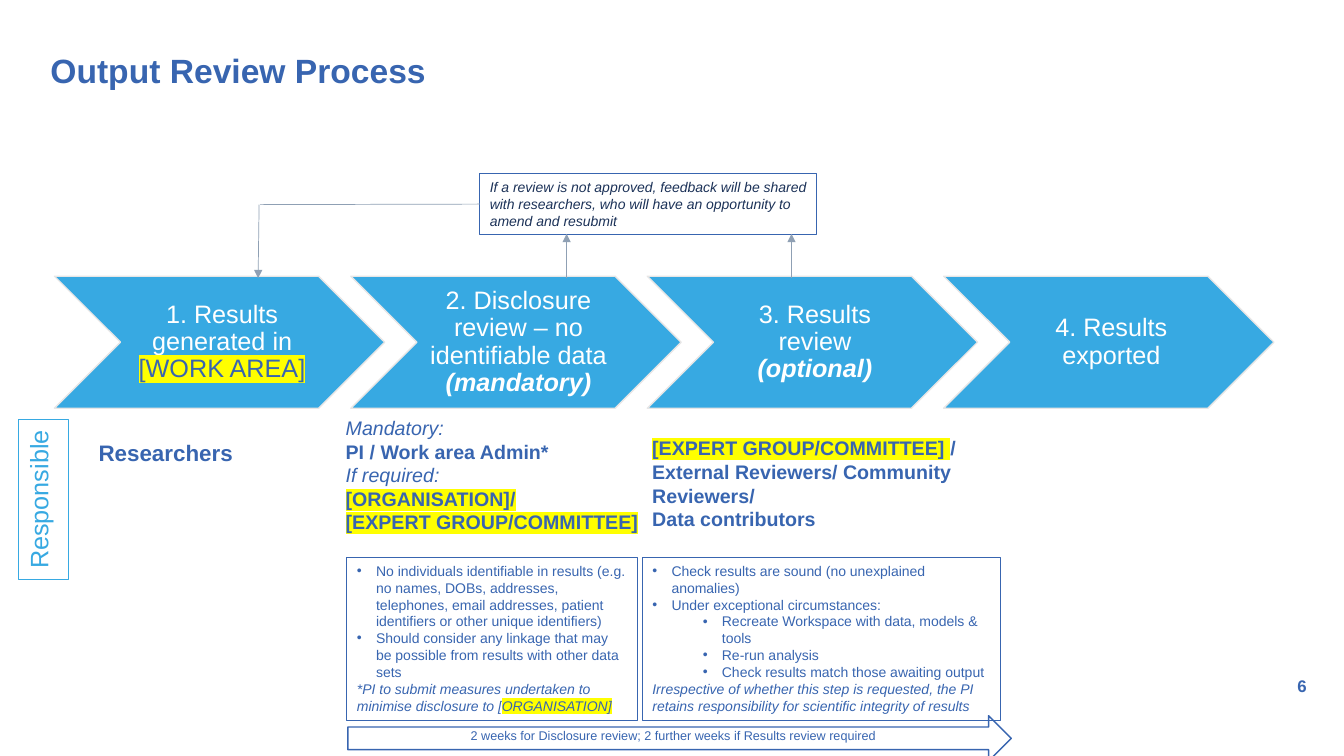
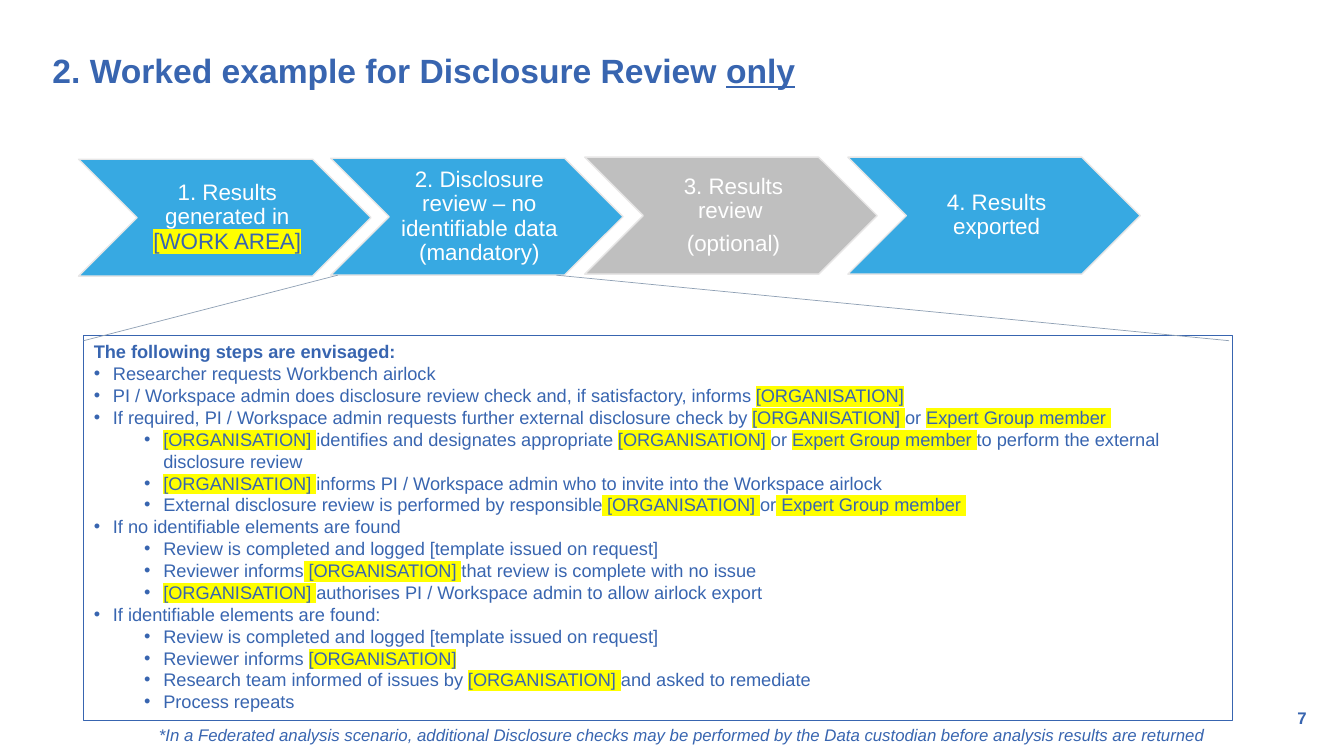
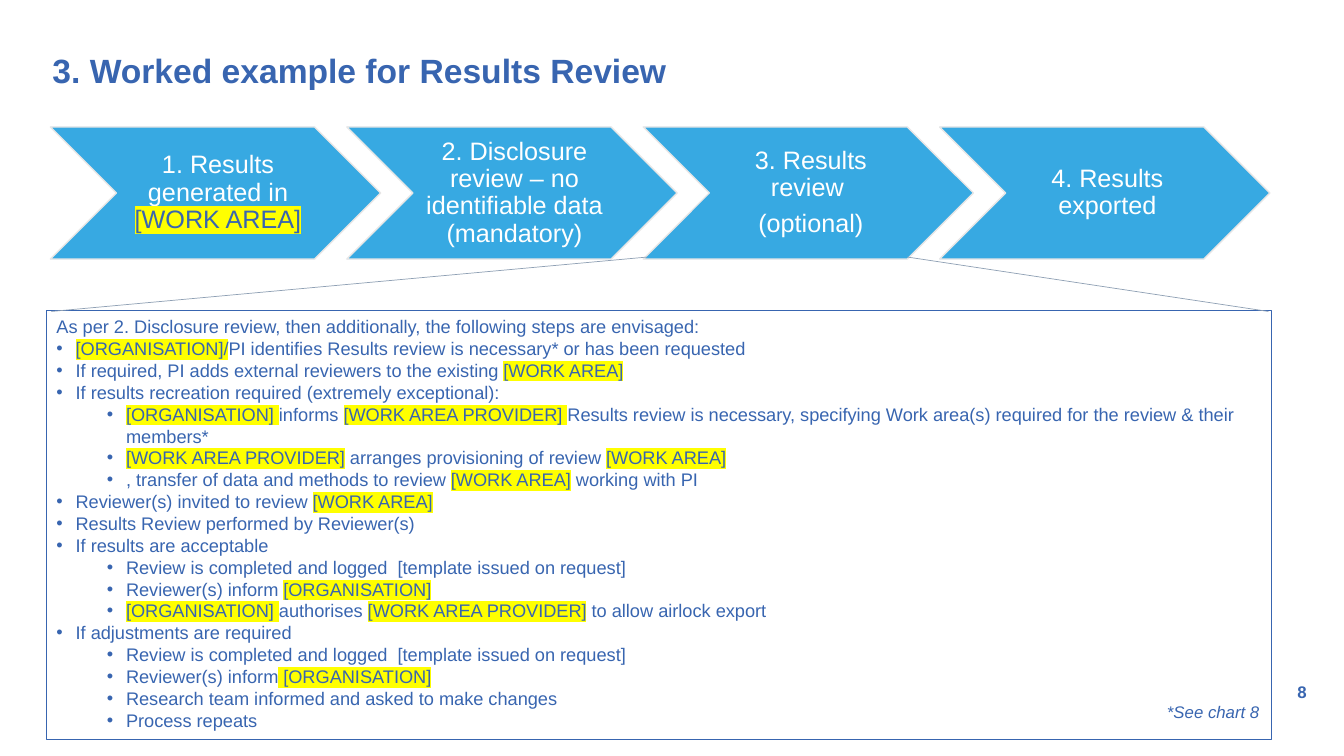
from dataclasses import dataclass
from functools import partial

from lxml.etree import SubElement
from pptx import Presentation
from pptx.dml.color import RGBColor
from pptx.enum.shapes import MSO_CONNECTOR as Connector, MSO_SHAPE as Preset
from pptx.enum.text import MSO_ANCHOR as Anchor, MSO_AUTO_SIZE as AutoSize, PP_ALIGN as Align
from pptx.oxml.ns import qn
from pptx.util import Inches, Pt

FONT = "Arial"
BLUE, SKY, NAVY = "3865B0", "37A9E2", "1C3258"
WHITE, GREY, PALE, SLATE = "FFFFFF", "BFBFBF", "E7E6E6", "8FA0B4"
YELLOW = "FFFF00"
TWO_LISTS, ONE_LIST = 3, 1
HIGHLIGHT_MARK, STRONG_MARK = "|", "~"
CHEVRON_RATIO = 2.5
CHEVRON_PITCH = 2.94


@dataclass(frozen=True)
class Line:
    text: str
    depth: int = 0
    bold: bool = False
    italic: bool = False


Bullet = partial(Line, depth=1)
Sub = partial(Line, depth=2)
Bold = partial(Line, bold=True)
Italic = partial(Line, italic=True)

STEPS = [
    [Line("1. Results generated in |[WORK AREA]|")],
    [Line("2. Disclosure review – no identifiable data (mandatory)")],
    [Line("3. Results review "), Line("(optional)")],
    [Line("4. Results exported")],
]
STRONG_STEPS = [
    STEPS[0],
    [Line("2. Disclosure review – no identifiable data ~(mandatory)~")],
    [Line("3. Results review ~(optional)~")],
    STEPS[3],
]

DISCLOSURE_CHECKS = [
    Bullet("No individuals identifiable in results (e.g. no names, DOBs, addresses, telephones, "
           "email addresses, patient identifiers or other unique identifiers)"),
    Bullet("Should consider any linkage that may be possible from results with other data sets"),
    Italic("*PI to submit measures undertaken to minimise disclosure to [|ORGANISATION]|"),
]
RESULTS_CHECKS = [
    Bullet("Check results are sound (no unexplained anomalies)"),
    Bullet("Under exceptional circumstances:"),
    Sub("Recreate Workspace with data, models & tools"),
    Sub("Re-run analysis"),
    Sub("Check results match those awaiting output"),
    Italic("Irrespective of whether this step is requested, the PI retains responsibility "
           "for scientific integrity of results"),
]
DISCLOSURE_STEPS = [
    Bold("The following steps are envisaged:"),
    Bullet("Researcher requests Workbench airlock"),
    Bullet("PI / Workspace admin does disclosure review check and, if satisfactory, "
           "informs |[ORGANISATION]|"),
    Bullet("If required, PI / Workspace admin requests further external disclosure check by "
           "|[ORGANISATION] |or |Expert Group member |"),
    Sub("|[ORGANISATION] |identifies and designates appropriate |[ORGANISATION] |or "
        "|Expert Group member |to perform the external disclosure review"),
    Sub("|[ORGANISATION] |informs PI / Workspace admin who to invite into the Workspace airlock"),
    Sub("External disclosure review is performed by responsible| [ORGANISATION] |or"
        "| Expert Group member |"),
    Bullet("If no identifiable elements are found"),
    Sub("Review is completed and logged [template issued on request]"),
    Sub("Reviewer informs| [ORGANISATION] |that review is complete with no issue"),
    Sub("|[ORGANISATION] |authorises PI / Workspace admin to allow airlock export"),
    Bullet("If identifiable elements are found:"),
    Sub("Review is completed and logged [template issued on request]"),
    Sub("Reviewer informs |[ORGANISATION]|"),
    Sub("Research team informed of issues by |[ORGANISATION] |and asked to remediate"),
    Sub("Process repeats"),
]
RESULTS_STEPS = [
    Line("As per 2. Disclosure review, then additionally, the following steps are envisaged:"),
    Bullet("|[ORGANISATION]/|PI identifies Results review is necessary* or has been requested"),
    Bullet("If required, PI adds external reviewers to the existing |[WORK AREA]|"),
    Bullet("If results recreation required (extremely exceptional):"),
    Sub("|[ORGANISATION] |informs |[WORK AREA PROVIDER] |Results review is necessary, "
        "specifying Work area(s) required for the review & their members*"),
    Sub("|[WORK AREA PROVIDER]| arranges provisioning of review |[WORK AREA]|"),
    Sub(", transfer of data and methods to review |[WORK AREA]| working with PI"),
    Bullet("Reviewer(s) invited to review |[WORK AREA]|"),
    Bullet("Results Review performed by Reviewer(s)"),
    Bullet("If results are acceptable"),
    Sub("Review is completed and logged  [template issued on request]"),
    Sub("Reviewer(s) inform |[ORGANISATION]|"),
    Sub("|[ORGANISATION] |authorises |[WORK AREA PROVIDER]| to allow airlock export"),
    Bullet("If adjustments are required"),
    Sub("Review is completed and logged  [template issued on request]"),
    Sub("Reviewer(s) inform| [ORGANISATION]|"),
    Sub("Research team informed and asked to make changes"),
    Sub("Process repeats"),
]


def paint(color_format, color):
    color_format.rgb = RGBColor.from_string(color)


def style_line(line, color, width):
    paint(line.fill.fore_color if line.fill.type else line.color, color)
    line.width = Pt(width)


def place(shape, box):
    shape.left, shape.top, shape.width, shape.height = map(Inches, box)


def set_bullet(paragraph, depth):
    properties = paragraph._p.get_or_add_pPr()
    if depth == 0:
        properties.set("marL", "0")
        properties.set("indent", "0")
        SubElement(properties, qn("a:buNone"))
        return
    paragraph.level = depth - 1
    properties.set("marL", str(Inches(0.19 + 0.5 * (depth - 1))))
    properties.set("indent", str(Inches(-0.19)))
    SubElement(properties, qn("a:buFont"), typeface=FONT)
    SubElement(properties, qn("a:buChar"), char="•")


def highlight(run):
    paint(run.font.color, BLUE)
    marker = SubElement(run._r.get_or_add_rPr(), qn("a:highlight"))
    SubElement(marker, qn("a:srgbClr"), val=YELLOW)


def add_runs(paragraph, text):
    for part, marked_text in enumerate(text.split(HIGHLIGHT_MARK)):
        for piece, run_text in enumerate(marked_text.split(STRONG_MARK)):
            if not run_text:
                continue
            run = paragraph.add_run()
            run.text = run_text
            if part % 2:
                highlight(run)
            if piece % 2:
                run.font.bold = run.font.italic = True


def write(shape, lines, size, color=BLUE, align=Align.LEFT, anchor=Anchor.TOP,
          insets=(0.1, 0.05, 0.1, 0.05), spacing=None, after=0):
    frame = shape.text_frame
    frame.word_wrap = True
    frame.auto_size = AutoSize.NONE
    frame.vertical_anchor = anchor
    (frame.margin_left, frame.margin_top,
     frame.margin_right, frame.margin_bottom) = map(Inches, insets)
    for index, line in enumerate(lines):
        paragraph = frame.add_paragraph() if index else frame.paragraphs[0]
        set_bullet(paragraph, line.depth)
        paragraph.alignment = align
        paragraph.space_before = Pt(0)
        paragraph.space_after = Pt(after)
        if spacing:
            paragraph.line_spacing = spacing
        font = paragraph.font
        font.name, font.size = FONT, Pt(size)
        font.bold, font.italic = line.bold, line.italic
        paint(font.color, color)
        add_runs(paragraph, line.text)


def add_label(slide, box, lines, size, **style):
    label = slide.shapes.add_textbox(*map(Inches, box))
    write(label, lines, size, **style)


def add_preset(slide, preset, box, line_color, line_width, fill=None):
    shape = slide.shapes.add_shape(preset, *map(Inches, box))
    shape.shadow.inherit = False
    if fill:
        shape.fill.solid()
        paint(shape.fill.fore_color, fill)
    else:
        shape.fill.background()
    style_line(shape.line, line_color, line_width)
    return shape


def add_outlined_text(slide, box, lines, size, color, outline, **style):
    shape = add_preset(slide, Preset.RECTANGLE, box, outline, 0.75)
    write(shape, lines, size, color, **style)
    return shape


def fill_list(slide, index, box, lines, size):
    body = slide.placeholders[index]
    place(body, box)
    style_line(body.line, BLUE, 0.75)
    write(body, lines, size)


def add_chevrons(slide, lefts, tops, height, size, steps, inactive=None):
    for index, (left, top, lines) in enumerate(zip(lefts, tops, steps)):
        fill = GREY if index == inactive else SKY
        box = (left, top, height * CHEVRON_RATIO, height)
        chevron = add_preset(slide, Preset.CHEVRON, box, PALE, 1, fill)
        write(chevron, lines, size, WHITE, Align.CENTER, Anchor.MIDDLE,
              (0.08, 0.03, 0.03, 0.03), 0.9, size * 0.35)


def add_even_chevrons(slide, left, top, steps):
    lefts = [left + CHEVRON_PITCH * index for index in range(len(steps))]
    add_chevrons(slide, lefts, [top] * len(steps), 1.31, 18, steps)


def add_line(slide, start, end, arrow=False):
    connector = slide.shapes.add_connector(Connector.STRAIGHT, *map(Inches, start + end))
    style_line(connector.line, SLATE, 0.5)
    if arrow:
        SubElement(connector.line._get_or_add_ln(), qn("a:tailEnd"), type="triangle")
    SubElement(connector._element.spPr, qn("a:effectLst"))
    return connector


def add_page(presentation, layout, title, title_left, number, number_top):
    slide = presentation.slides.add_slide(presentation.slide_layouts[layout])
    place(slide.shapes.title, (title_left, 0.49, 10.44, 0.87))
    write(slide.shapes.title, [Bold(title)], 24, insets=(0, 0, 0, 0))
    add_label(slide, (12.61, number_top, 0.35, 0.2), [Bold(number)], 12, align=Align.RIGHT,
              anchor=Anchor.MIDDLE, insets=(0, 0.05, 0, 0.05))
    return slide


def build_process(presentation):
    slide = add_page(presentation, TWO_LISTS, "Output Review Process", 0.5, "6", 6.7)
    fill_list(slide, 1, (3.44, 5.53, 2.88, 1.62), DISCLOSURE_CHECKS, 10)
    fill_list(slide, 2, (6.37, 5.53, 3.55, 1.62), RESULTS_CHECKS, 10)
    add_even_chevrons(slide, 0.54, 2.74, STRONG_STEPS)

    feedback = add_outlined_text(
        slide, (4.76, 1.72, 3.34, 0.61),
        [Italic("If a review is not approved, feedback will be shared with researchers, "
                "who will have an opportunity to amend and resubmit")], 10, NAVY, BLUE)
    add_line(slide, (2.58, 2.03), (4.76, 2.03)).end_connect(feedback, 1)
    add_line(slide, (2.57, 2.03), (2.56, 2.76), arrow=True)
    for left in (5.62, 7.85):
        add_line(slide, (left, 2.76), (left, 2.32), arrow=True)

    responsible = add_outlined_text(slide, (0.18, 4.16, 0.5, 1.59), [Line("Responsible")],
                                    18, SKY, SKY, align=Align.CENTER)
    responsible.text_frame._txBody.bodyPr.set("vert", "vert270")
    add_label(slide, (0.88, 4.31, 3, 0.37), [Bold("Researchers")], 16)
    add_label(slide, (3.33, 4.08, 3.11, 1.28), [
        Italic("Mandatory:"),
        Bold("PI / Work area Admin*"),
        Italic("If required:"),
        Bold("|[ORGANISATION]/|"),
        Bold("|[EXPERT GROUP/COMMITTEE]|"),
    ], 14)
    add_label(slide, (6.37, 4.28, 3.34, 1.04), [
        Bold("|[EXPERT GROUP/COMMITTEE] |/"),
        Bold("External Reviewers/ Community Reviewers/"),
        Bold("Data contributors"),
    ], 14)
    add_preset(slide, Preset.RIGHT_ARROW, (3.45, 7.1, 6.58, 0.45), BLUE, 1)
    add_label(slide, (4.57, 7.17, 4.23, 0.25), [
        Line("2 weeks for Disclosure review; 2 further weeks if Results review required")], 9)


def build_disclosure(presentation):
    slide = add_page(presentation, ONE_LIST, "2. Worked example for Disclosure Review ",
                     0.52, "7", 7.02)
    only = slide.shapes.title.text_frame.paragraphs[0].add_run()
    only.text = "only"
    only.font.underline = True
    fill_list(slide, 1, (0.83, 3.33, 11.39, 3.82), DISCLOSURE_STEPS, 13)
    add_chevrons(slide, (0.78, 3.28, 5.8, 8.41), (1.58, 1.57, 1.56, 1.56), 1.16, 16,
                 STEPS, inactive=2)
    add_line(slide, (3.35, 2.73), (0.83, 3.38))
    add_line(slide, (5.52, 2.73), (12.19, 3.38))
    add_label(slide, (1, 7.14, 11.06, 0.3), [
        Italic("*In a Federated analysis scenario, additional Disclosure checks may be performed "
               "by the Data custodian before analysis results are returned")],
        12, align=Align.RIGHT)


def build_results(presentation):
    slide = add_page(presentation, ONE_LIST, "3. Worked example for Results Review",
                     0.52, "8", 6.76)
    fill_list(slide, 1, (0.46, 3.08, 12.15, 4.26), RESULTS_STEPS, 13)
    add_even_chevrons(slide, 0.5, 1.26, STEPS)
    add_line(slide, (6.42, 2.55), (0.51, 3.09))
    add_line(slide, (9, 2.55), (12.58, 3.09))
    add_label(slide, (7.7, 6.91, 4.89, 0.3), [Italic("*See chart 8")], 12, align=Align.RIGHT)


def main():
    presentation = Presentation()
    presentation.slide_width, presentation.slide_height = Inches(13.33), Inches(7.5)
    build_process(presentation)
    build_disclosure(presentation)
    build_results(presentation)
    presentation.save("out.pptx")


if __name__ == "__main__":
    main()
